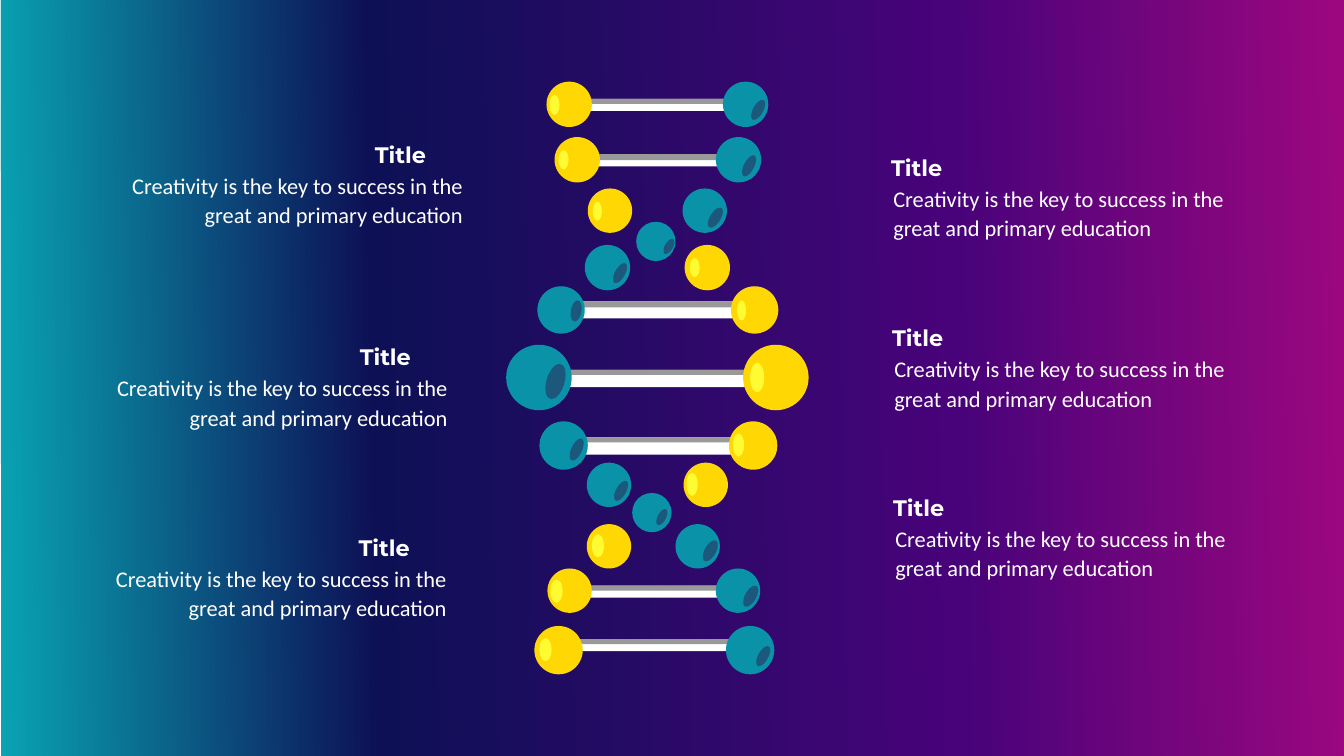
import math
from collections import namedtuple

import lxml.etree
import pptx
import pptx.dml.color
import pptx.enum.shapes
import pptx.enum.text
import pptx.oxml.ns
import pptx.util

PX = 9144
WHITE, GREY = "FFFFFF", "999999"
TEAL, TEAL_SHADE = "0992A8", "1B587C"
YELLOW, YELLOW_GLINT = "FFD702", "FFFB33"
BACKGROUND_STOPS = [(0, "09A3B3"), (28, "0D1055"), (71, "48037A"), (100, "9C077F")]
BODY = "Creativity is the key to success in the great and primary education"

Rung = namedtuple("Rung", "top size yellow_left teal_left glint shade lean rod")
RUNGS = [
    Rung(81, 45, 542, 717, (545, 94, 10, 20), (745, 99, 14, 20), 0.65, (573, 98, 168, 12, 5)),
    Rung(136, 45, 550, 710, (554, 149, 10, 19), (736, 154, 14, 21), 0.65, (573, 153, 159, 12, 6)),
    Rung(187, 44, 583, 677, (588, 200, 9, 19), (702, 206, 15, 20), 0.65, None),
    Rung(243, 45, 679, 580, (684, 256, 10, 19), (608, 261, 14, 20), 0.65, None),
    Rung(284, 47, 725, 533, (731, 298, 9, 20), (566, 298, 11, 21), 0.25, (556, 299, 191, 17, 6)),
    Rung(342, 65, 737, 502, (744, 360, 14, 29), (541, 361, 20, 35), 0.4, (535, 367, 234, 17, 5)),
    Rung(418, 48, 723, 535, (727, 430, 11, 23), (565, 435, 14, 22), 0.6, (558, 434, 196, 17, 5)),
    Rung(459, 44, 678, 582, (681, 469, 11, 23), (609, 477, 14, 20), 0.65, None),
    Rung(520, 44, 582, 670, (587, 530, 12, 23), (697, 536, 15, 21), 0.6, None),
    Rung(564, 44, 543, 710, (546, 575, 12, 23), (737, 581, 15, 21), 0.6, (565, 581, 172, 12, 5)),
    Rung(621, 48, 530, 720, (535, 633, 12, 23), (750, 641, 14, 20), 0.65, (550, 634, 193, 12, 5)),
]
CROSSINGS = [
    ((631, 220, 39, 39), (658, 237, 11, 15)),
    ((627, 489, 39, 39), (651, 505, 11, 16)),
]
LEFT_BLOCKS = [(94, 162), (79, 363), (78, 552)]
RIGHT_BLOCKS = [(874, 175), (875, 344), (876, 512)]


def color(value):
    """Turn a hex string into a colour."""
    return pptx.dml.color.RGBColor.from_string(value)


def lengths(*values):
    """Turn px into EMU."""
    return [round(value * PX) for value in values]


def paint(shape, fill):
    """Give a shape a flat fill without line or shadow."""
    shape.shadow.inherit = False
    shape.line.fill.background()
    shape.fill.solid()
    shape.fill.fore_color.rgb = color(fill)


def add_preset(shapes, kind, box, fill):
    """Add a flat preset shape and return it."""
    shape = shapes.add_shape(kind, *lengths(*box))
    paint(shape, fill)
    return shape


def add_bar(shapes, box, fill):
    """Add a flat rectangle and return it."""
    return add_preset(shapes, pptx.enum.shapes.MSO_SHAPE.RECTANGLE, box, fill)


def add_ball(shapes, box, fill):
    """Add a flat ellipse."""
    add_preset(shapes, pptx.enum.shapes.MSO_SHAPE.OVAL, box, fill)


def add_command(outline, name, points=()):
    """Append one drawing command to a freeform outline."""
    qn = pptx.oxml.ns.qn
    command = lxml.etree.SubElement(outline, qn(name))
    for x, y in points:
        lxml.etree.SubElement(command, qn("a:pt"), x=str(x), y=str(y))


def add_shade(shapes, box, lean):
    """Add a leaning oval of four curves that fills the box."""
    left, top, width, height = box

    def point(angle, pull=0):
        x = math.sin(angle + lean) + pull * math.cos(angle + lean)
        y = math.cos(angle) - pull * math.sin(angle)
        return lengths(width / 2 * (1 + x), height / 2 * (1 - y))

    right, bottom = left + width, top + height
    builder = shapes.build_freeform(*lengths(left, top))
    corners = [(right, top), (right, bottom), (left, bottom)]
    builder.add_line_segments([lengths(*corner) for corner in corners])
    shape = builder.convert_to_shape()
    paint(shape, TEAL_SHADE)
    outline = next(shape._element.iter(pptx.oxml.ns.qn("a:path")))
    for command in list(outline):
        outline.remove(command)
    add_command(outline, "a:moveTo", [point(0)])
    for quarter in range(4):
        start, end = quarter * math.pi / 2, (quarter + 1) * math.pi / 2
        add_command(outline, "a:cubicBezTo", [point(start, 0.55), point(end, -0.55), point(end)])
    add_command(outline, "a:close")


def add_background(slide):
    """Cover the slide with the four-colour gradient."""
    shape = add_bar(slide.shapes, (1, 0, 1333, 750), WHITE)
    shape.fill.gradient()
    shape.fill.gradient_angle = 1
    qn = pptx.oxml.ns.qn
    stops = shape._element.spPr.find(qn("a:gradFill")).find(qn("a:gsLst"))
    for stop in list(stops):
        stops.remove(stop)
    for position, value in BACKGROUND_STOPS:
        stop = lxml.etree.SubElement(stops, qn("a:gs"), pos=str(position * 1000))
        lxml.etree.SubElement(stop, qn("a:srgbClr"), val=value)


def add_helix(slide):
    """Add the DNA helix as one group, layer by layer."""
    shapes = slide.shapes.add_group_shape().shapes
    rods = [rung.rod for rung in RUNGS if rung.rod]
    for left, top, width, height, shadow_height in rods:
        add_bar(shapes, (left, top, width, height), WHITE)
    for left, top, width, height, shadow_height in rods:
        add_bar(shapes, (left, top, width, shadow_height), GREY)
    for rung in RUNGS:
        add_ball(shapes, (rung.teal_left, rung.top, rung.size, rung.size), TEAL)
    for ball, shade in CROSSINGS:
        add_ball(shapes, ball, TEAL)
    for rung in RUNGS:
        add_ball(shapes, (rung.yellow_left, rung.top, rung.size, rung.size), YELLOW)
    for rung in RUNGS:
        add_ball(shapes, rung.glint, YELLOW_GLINT)
        add_shade(shapes, rung.shade, rung.lean)
    for ball, shade in CROSSINGS:
        add_shade(shapes, shade, 0.6)


def add_text(shapes, box, text, font_name, margins, wrap, bold=False):
    """Add a white text box and return its paragraph."""
    frame = shapes.add_textbox(*lengths(*box)).text_frame
    frame.text = text
    frame.word_wrap = wrap
    frame.auto_size = pptx.enum.text.MSO_AUTO_SIZE.SHAPE_TO_FIT_TEXT
    frame.margin_left = frame.margin_right = margins[0] * PX
    frame.margin_top = frame.margin_bottom = margins[1] * PX
    paragraph = frame.paragraphs[0]
    font = paragraph.runs[0].font
    font.name, font.size, font.bold = font_name, pptx.util.Pt(16), bold
    font.color.rgb = color(WHITE)
    return paragraph


def add_block(slide, left, top, title_offset, alignment):
    """Add a title with its body text as one group."""
    shapes = slide.shapes.add_group_shape().shapes
    title_box = (left + title_offset, top - 27, 76, 37)
    add_text(shapes, title_box, "Title", "Montserrat", (10, 5), False, True)
    body = add_text(shapes, (left, top, 377, 70), BODY, "Calibri", (12, 6), True)
    body.alignment = alignment
    body.line_spacing = 1.1


def main():
    """Build the slide and save it."""
    presentation = pptx.Presentation()
    presentation.slide_width, presentation.slide_height = lengths(1333, 750)
    slide = presentation.slides.add_slide(presentation.slide_layouts[6])
    add_background(slide)
    add_helix(slide)
    for left, top in RIGHT_BLOCKS:
        add_block(slide, left, top, 0, pptx.enum.text.PP_ALIGN.LEFT)
    for left, top in LEFT_BLOCKS:
        add_block(slide, left, top, 268, pptx.enum.text.PP_ALIGN.RIGHT)
    presentation.save("out.pptx")


if __name__ == "__main__":
    main()
